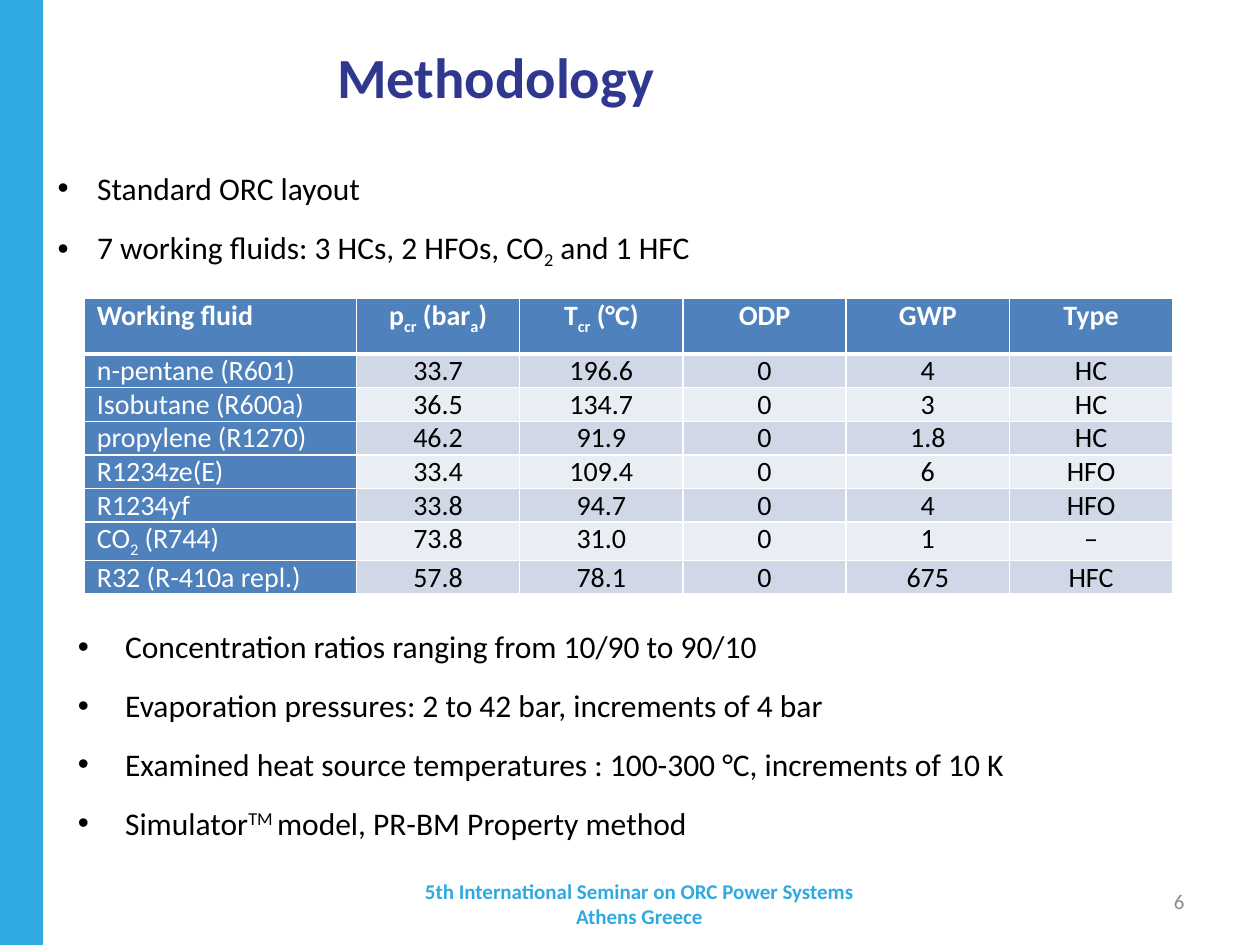
import pptx
import pptx.util
import pptx.dml.color
import pptx.enum.shapes
import pptx.enum.text
import pptx.oxml
import pptx.oxml.ns

Pt = pptx.util.Pt
ALIGN = pptx.enum.text.PP_ALIGN
MIDDLE = pptx.enum.text.MSO_ANCHOR.MIDDLE

# Content: ~x~ is subscript, ^x^ is superscript
TITLE = "Methodology"
SETUP = ["Standard ORC layout",
         "7 working fluids: 3 HCs, 2 HFOs, CO~2~ and 1 HFC"]
FLUIDS = [
    ("Working fluid", "p~cr~ (bar~a~)", "T~cr~ (°C)", "ODP", "GWP", "Type"),
    ("n-pentane (R601)", "33.7", "196.6", "0", "4", "HC"),
    ("Isobutane (R600a)", "36.5", "134.7", "0", "3", "HC"),
    ("propylene (R1270)", "46.2", "91.9", "0", "1.8", "HC"),
    ("R1234ze(E)", "33.4", "109.4", "0", "6", "HFO"),
    ("R1234yf", "33.8", "94.7", "0", "4", "HFO"),
    ("CO~2~ (R744)", "73.8", "31.0", "0", "1", "–"),
    ("R32 (R-410a repl.)", "57.8", "78.1", "0", "675", "HFC"),
]
CONDITIONS = ["Concentration ratios ranging from 10/90 to 90/10",
              "Evaporation pressures: 2 to 42 bar, increments of 4 bar",
              "Examined heat source temperatures : 100-300 °C, increments of 10 K",
              "Simulator^TM ^model, PR-BM Property method"]
SEMINAR = ["5th International Seminar on ORC Power Systems", "Athens Greece"]
PAGE = ["6"]

COLORS = {"band": "2FAAE1", "title": "2F388E", "page": "8C8C8C", "text": "000000",
          "white": "FFFFFF", "header": "4F81BD", "odd": "D0D8E8", "even": "E9EDF4"}
BASELINES = {"~": -25000, "^": 30000}
COLUMN_WIDTHS = [155.5] + [93.3] * 5
ROW_HEIGHTS = [31.7] + [16.6] * (len(FLUIDS) - 1)


def color(name):
    return pptx.dml.color.RGBColor.from_string(COLORS[name])


def fill(part, name):
    part.fill.solid()
    part.fill.fore_color.rgb = color(name)


def write(paragraph, text, size, ink, bold=False, **layout):
    """Write marked-up text in one paragraph and format it."""
    for key, value in layout.items():
        setattr(paragraph, key, value)
    mark = "^" if "^" in text else "~"
    for i, piece in enumerate(text.split(mark)):
        run = paragraph.add_run()
        run.text = piece
        for key, value in {"name": "Calibri", "size": Pt(size), "bold": bold}.items():
            setattr(run.font, key, value)
        run.font.color.rgb = color(ink)
        if i % 2:
            run.font._element.set("baseline", str(BASELINES[mark]))


def add_bullet(paragraph, indent):
    properties = paragraph._p.get_or_add_pPr()
    properties.set("marL", str(Pt(indent)))
    properties.set("indent", str(-Pt(indent)))
    font = pptx.oxml.ns.qn("a:buFont")
    properties.append(properties.makeelement(font, {"typeface": "Arial"}))
    char = pptx.oxml.ns.qn("a:buChar")
    properties.append(properties.makeelement(char, {"char": "•"}))


def add_text(slide, box, lines, size, ink, bold=False, indent=0, anchor=None, **layout):
    frame = slide.shapes.add_textbox(*map(Pt, box)).text_frame
    frame.word_wrap = True
    frame.vertical_anchor = anchor
    for i, line in enumerate(lines):
        paragraph = frame.add_paragraph() if i else frame.paragraphs[0]
        if indent:
            add_bullet(paragraph, indent)
        write(paragraph, line, size, ink, bold, **layout)


def add_borders(cell, widths):
    """Draw white cell borders; they must stand before the fill."""
    properties = cell._tc.get_or_add_tcPr()
    for i, (side, width) in enumerate(widths.items()):
        properties.insert(i, pptx.oxml.parse_xml(
            f'<a:{side} {pptx.oxml.ns.nsdecls("a")} w="{Pt(width)}"><a:solidFill>'
            f'<a:srgbClr val="{COLORS["white"]}"/></a:solidFill></a:{side}>'))


def add_fluid_table(slide):
    size = (sum(COLUMN_WIDTHS), sum(ROW_HEIGHTS))
    table = slide.shapes.add_table(len(FLUIDS), len(FLUIDS[0]),
                                   *map(Pt, (48.2, 170.6, *size))).table
    for column, width in zip(table.columns, COLUMN_WIDTHS):
        column.width = Pt(width)
    for r, (row, height) in enumerate(zip(FLUIDS, ROW_HEIGHTS)):
        table.rows[r].height = Pt(height)
        for c, text in enumerate(row):
            cell = table.cell(r, c)
            heading = r == 0 or c == 0
            fill(cell, "header" if heading else "odd" if r % 2 else "even")
            cell.margin_top = cell.margin_bottom = 0
            write(cell.text_frame.paragraphs[0], text, 16,
                  "white" if heading else "text", r == 0, space_after=Pt(12),
                  alignment=ALIGN.CENTER if c else ALIGN.LEFT)
            add_borders(cell, {"lnL": 1, "lnR": 1, "lnT": 3 if r == 1 else 1,
                               "lnB": 3 if r == 0 else 1})


def main():
    deck = pptx.Presentation()
    deck.slide_width, deck.slide_height = Pt(720), Pt(540)
    slide = deck.slides.add_slide(deck.slide_layouts[5])

    # Side band
    band = slide.shapes.add_shape(pptx.enum.shapes.MSO_SHAPE.RECTANGLE,
                                  Pt(-0.7), 0, Pt(25.2), Pt(540))
    band.shadow.inherit = False
    fill(band, "band")
    band.line.fill.background()

    # Title
    title = slide.shapes.title
    place = {"left": 36.7, "top": 21.6, "width": 493.2, "height": 43.9}
    for key, value in place.items():
        setattr(title, key, Pt(value))
    title.text_frame.vertical_anchor = MIDDLE
    title.text_frame.auto_size = pptx.enum.text.MSO_AUTO_SIZE.NONE
    write(title.text_frame.paragraphs[0], TITLE, 32.4, "title", True,
          alignment=ALIGN.CENTER)

    # Page number and seminar
    add_text(slide, (643.7, 500.4, 40.3, 28.8), PAGE, 12, "page",
             anchor=MIDDLE, alignment=ALIGN.RIGHT)
    add_text(slide, (206.6, 501.8, 317.5, 28.8), SEMINAR, 12, "band", True,
             anchor=MIDDLE, alignment=ALIGN.CENTER)

    # Bullets around the fluid table
    add_text(slide, (25.9, 92.9, 388, 63.4), SETUP, 18, "text",
             indent=22.5, space_after=Pt(12))
    add_fluid_table(slide)
    add_text(slide, (37.4, 355, 656.6, 131), CONDITIONS, 18, "text",
             indent=27, space_after=Pt(12))

    deck.save("out.pptx")


if __name__ == "__main__":
    main()
